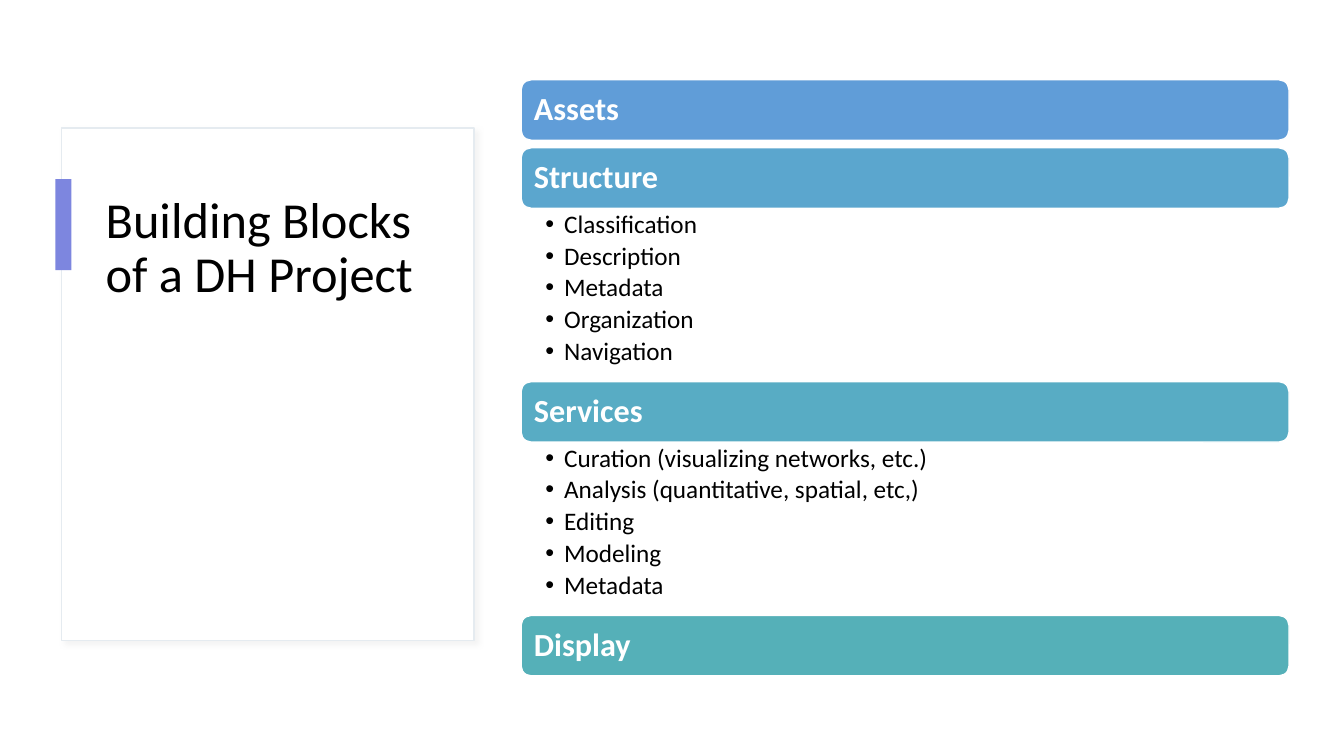
from dataclasses import dataclass

from lxml import etree
from pptx import Presentation
from pptx.dml.color import RGBColor
from pptx.enum import shapes, text
from pptx.oxml import ns
from pptx.util import Pt


@dataclass(frozen=True)
class Theme:
    font: str = "Calibri"
    title_size: float = 36
    heading_size: float = 23
    item_size: float = 18
    white: str = "FFFFFF"
    ink: str = "000000"
    card_line: str = "E5EBF0"
    card_shadow: str = "D9D9D9"
    accent: str = "7D86DF"
    bars: tuple = ("609DD8", "5BA6CE", "58ACC4", "55B0B8")


theme = Theme()
BLOCKS = [
    ("Assets", []),
    ("Structure", ["Classification", "Description", "Metadata",
                   "Organization", "Navigation"]),
    ("Services", ["Curation (visualizing networks, etc.)",
                  "Analysis (quantitative, spatial, etc,)",
                  "Editing", "Modeling", "Metadata"]),
    ("Display", []),
]
BLOCK_LEFT, BLOCK_WIDTH = 372.2, 548.6
BAR_HEIGHT, BAR_GAP, LIST_HEIGHT = 43.2, 5.4, 123.8


def add_block(kind, left, top, width, height, fill, line=None):
    block = page.shapes.add_shape(kind, Pt(left), Pt(top), Pt(width), Pt(height))
    block.shadow.inherit = False
    block.fill.solid()
    block.fill.fore_color.rgb = RGBColor.from_string(fill)
    if line:
        block.line.color.rgb = RGBColor.from_string(line)
        block.line.width = Pt(1)
    else:
        block.line.fill.background()
    return block


def write(para, wording, size, color, bold=False):
    para.alignment = text.PP_ALIGN.LEFT
    para.line_spacing = 0.9
    span = para.add_run()
    span.text = wording
    span.font.name = theme.font
    span.font.size = Pt(size)
    span.font.bold = bold
    span.font.color.rgb = RGBColor.from_string(color)


deck = Presentation()
deck.slide_width, deck.slide_height = Pt(960), Pt(540)
page = deck.slides.add_slide(deck.slide_layouts[6])

# Title card with a soft shadow and an accent tab
card = add_block(shapes.MSO_SHAPE.RECTANGLE, 44, 91.5, 294.5, 366,
                 theme.white, theme.card_line)
effects = card._element.spPr.find(ns.qn("a:effectLst"))
shadow = etree.SubElement(effects, ns.qn("a:outerShdw"), blurRad=str(Pt(4)),
                          dist=str(Pt(3)), dir="2700000", algn="tl", rotWithShape="0")
shade = etree.SubElement(shadow, ns.qn("a:srgbClr"), val=theme.card_shadow)
etree.SubElement(shade, ns.qn("a:alpha"), val="30000")

title = page.shapes.add_textbox(Pt(68.4), Pt(135.4), Pt(244), Pt(277.2))
title.text_frame.word_wrap = True
write(title.text_frame.paragraphs[0], "Building Blocks of a DH Project",
      theme.title_size, theme.ink)

add_block(shapes.MSO_SHAPE.RECTANGLE, 39.6, 128, 11.5, 65, theme.accent)

# Stacked heading bars, each followed by its list or by a gap
top = 57
for (heading, items), color in zip(BLOCKS, theme.bars):
    bar = add_block(shapes.MSO_SHAPE.ROUNDED_RECTANGLE, BLOCK_LEFT, top,
                    BLOCK_WIDTH, BAR_HEIGHT, color, theme.white)
    frame = bar.text_frame
    frame.word_wrap = True
    frame.vertical_anchor = text.MSO_ANCHOR.MIDDLE
    frame.margin_left = frame.margin_right = Pt(7.2)
    write(frame.paragraphs[0], heading, theme.heading_size, theme.white, bold=True)
    top += BAR_HEIGHT

    if not items:
        top += BAR_GAP
        continue

    box = page.shapes.add_textbox(Pt(BLOCK_LEFT), Pt(top),
                                  Pt(BLOCK_WIDTH), Pt(LIST_HEIGHT))
    frame = box.text_frame
    frame.word_wrap = True
    frame.margin_left, frame.margin_right = Pt(17.3), Pt(13)
    frame.margin_top = frame.margin_bottom = Pt(2.2)
    for index, item in enumerate(items):
        para = frame.add_paragraph() if index else frame.paragraphs[0]
        write(para, item, theme.item_size, theme.ink)
        para.space_after = Pt(3.3)
        props = para._p.get_or_add_pPr()
        props.set("marL", str(Pt(13.5)))
        props.set("indent", str(-Pt(13.5)))
        etree.SubElement(props, ns.qn("a:buFont"), typeface="Arial")
        etree.SubElement(props, ns.qn("a:buChar"), char="•")
    top += LIST_HEIGHT

deck.save("out.pptx")
